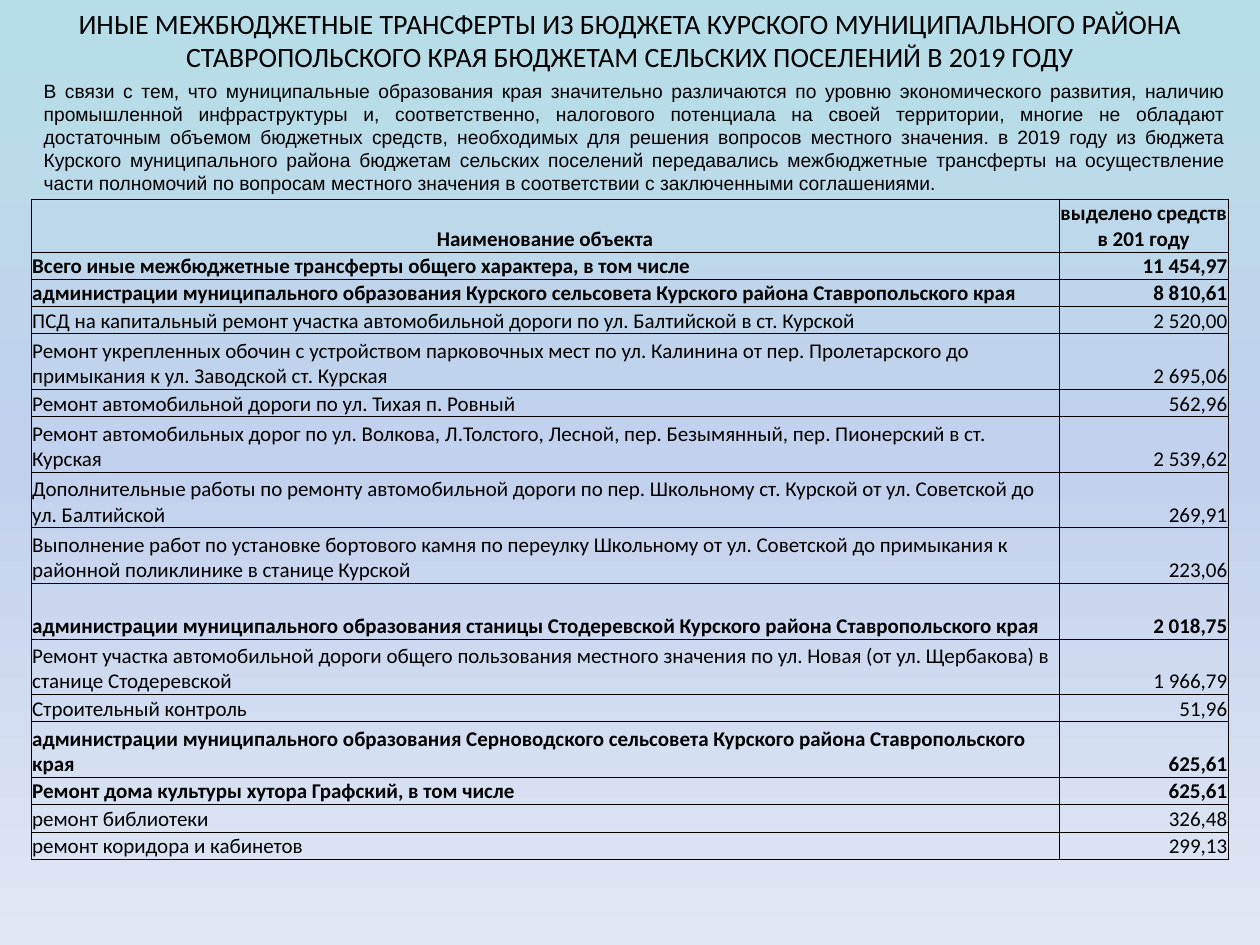
from copy import deepcopy

from pptx import Presentation
from pptx.dml.color import RGBColor
from pptx.enum.text import MSO_ANCHOR, MSO_AUTO_SIZE, PP_ALIGN
from pptx.oxml import parse_xml
from pptx.oxml.ns import nsdecls, qn
from pptx.util import Cm, Pt


def rgb(color):
    return RGBColor.from_string(color)


def format_paragraph(p, font, size, align, bold=False):
    p.alignment = align
    p.font.name = font
    p.font.size = Pt(size)
    p.font.bold = bold
    p.font.color.rgb = rgb("000000")


prs = Presentation()
prs.slide_width, prs.slide_height = Cm(25.4), Cm(19.05)
s = prs.slides.add_slide(prs.slide_layouts[5])

# Background: three-stop vertical gradient
fill = s.background.fill
fill.gradient()
fill.gradient_angle = 270
stop_list = s._element.find(".//" + qn("a:gsLst"))
stop_list.insert(1, deepcopy(stop_list[0]))
for stop, position, color in zip(fill.gradient_stops, (0, 0.5, 1), ("B7DEE8", "C2D1ED", "E1E8F5")):
    stop.position = position
    stop.color.rgb = rgb(color)

# Title
title = s.shapes.title
title.left, title.top, title.width, title.height = Cm(0), Cm(0), Cm(25.4), Cm(1.63)
tf = title.text_frame
tf.auto_size = MSO_AUTO_SIZE.NONE
tf.vertical_anchor = MSO_ANCHOR.TOP
tf.text = ("ИНЫЕ МЕЖБЮДЖЕТНЫЕ ТРАНСФЕРТЫ ИЗ БЮДЖЕТА КУРСКОГО МУНИЦИПАЛЬНОГО РАЙОНА "
           "СТАВРОПОЛЬСКОГО КРАЯ БЮДЖЕТАМ СЕЛЬСКИХ ПОСЕЛЕНИЙ В 2019 ГОДУ")
format_paragraph(tf.paragraphs[0], "Calibri", 16, PP_ALIGN.CENTER)

# Introduction
intro = s.shapes.add_textbox(Cm(0.63), Cm(1.47), Cm(24.33), Cm(2.62))
tf = intro.text_frame
tf.word_wrap = True
tf.text = (
    "В связи с тем, что муниципальные образования края значительно различаются по уровню "
    "экономического развития, наличию промышленной инфраструктуры и, соответственно, налогового "
    "потенциала на своей территории, многие не обладают достаточным объемом бюджетных средств, "
    "необходимых для решения вопросов местного значения. в 2019 году из бюджета Курского "
    "муниципального района бюджетам сельских поселений передавались межбюджетные трансферты на "
    "осуществление части полномочий по вопросам местного значения в соответствии с заключенными "
    "соглашениями.")
format_paragraph(tf.paragraphs[0], "Arial", 11, PP_ALIGN.JUSTIFY)

# Table rows: object, amount, bold, height
HEADER, SINGLE, DOUBLE = Cm(1.07), Cm(0.55), Cm(1.12)
rows = [
    ("Наименование объекта", "выделено средств\nв 201 году", True, HEADER),
    ("Всего иные межбюджетные трансферты общего характера, в том числе",
     "11 454,97", True, SINGLE),
    ("администрации муниципального образования Курского сельсовета Курского района "
     "Ставропольского края", "8 810,61", True, SINGLE),
    ("ПСД на капитальный ремонт участка автомобильной дороги по ул. Балтийской в ст. Курской",
     "2 520,00", False, SINGLE),
    ("Ремонт укрепленных обочин с устройством парковочных мест по ул. Калинина от "
     "пер. Пролетарского до примыкания к ул. Заводской ст. Курская", "2 695,06", False, DOUBLE),
    ("Ремонт автомобильной дороги по ул. Тихая п. Ровный", "562,96", False, SINGLE),
    ("Ремонт автомобильных дорог по ул. Волкова, Л.Толстого, Лесной, пер. Безымянный, "
     "пер. Пионерский в ст. Курская", "2 539,62", False, DOUBLE),
    ("Дополнительные работы по ремонту автомобильной дороги по пер. Школьному ст. Курской "
     "от ул. Советской до ул. Балтийской", "269,91", False, DOUBLE),
    ("Выполнение работ по установке бортового камня по переулку Школьному от ул. Советской "
     "до примыкания к районной поликлинике в станице Курской", "223,06", False, DOUBLE),
    ("администрации муниципального образования станицы Стодеревской Курского района "
     "Ставропольского края", "2 018,75", True, DOUBLE),
    ("Ремонт участка автомобильной дороги общего пользования местного значения по ул. Новая "
     "(от ул. Щербакова) в станице Стодеревской", "1 966,79", False, DOUBLE),
    ("Строительный контроль", "51,96", False, SINGLE),
    ("администрации муниципального образования Серноводского сельсовета Курского района "
     "Ставропольского края", "625,61", True, DOUBLE),
    ("Ремонт дома культуры хутора Графский, в том числе", "625,61", True, SINGLE),
    ("ремонт библиотеки", "326,48", False, SINGLE),
    ("ремонт коридора и кабинетов", "299,13", False, SINGLE),
]
widths = (Cm(20.72), Cm(3.41))
table = s.shapes.add_table(len(rows), len(widths), Cm(0.63), Cm(4.01), sum(widths),
                           sum(row[-1] for row in rows)).table
table.first_row = table.horz_banding = False
for column, width in zip(table.columns, widths):
    column.width = width

for i, (name, amount, bold, height) in enumerate(rows):
    table.rows[i].height = height
    aligns = (PP_ALIGN.LEFT, PP_ALIGN.RIGHT) if i else (PP_ALIGN.CENTER, PP_ALIGN.CENTER)
    for cell, text, align in zip(table.rows[i].cells, (name, amount), aligns):
        cell.text = text
        cell.vertical_anchor = MSO_ANCHOR.BOTTOM
        cell.margin_left = cell.margin_right = cell.margin_top = Cm(0.02)
        cell.margin_bottom = 0
        for p in cell.text_frame.paragraphs:
            format_paragraph(p, "Calibri", 12, align, bold)
        tcPr = cell._tc.get_or_add_tcPr()
        for side in ("lnL", "lnR", "lnT", "lnB"):
            tcPr.append(parse_xml(
                f'<a:{side} {nsdecls("a")} w="{Pt(0.5)}"><a:solidFill>'
                f'<a:srgbClr val="000000"/></a:solidFill></a:{side}>'))
        cell.fill.background()

prs.save("out.pptx")
